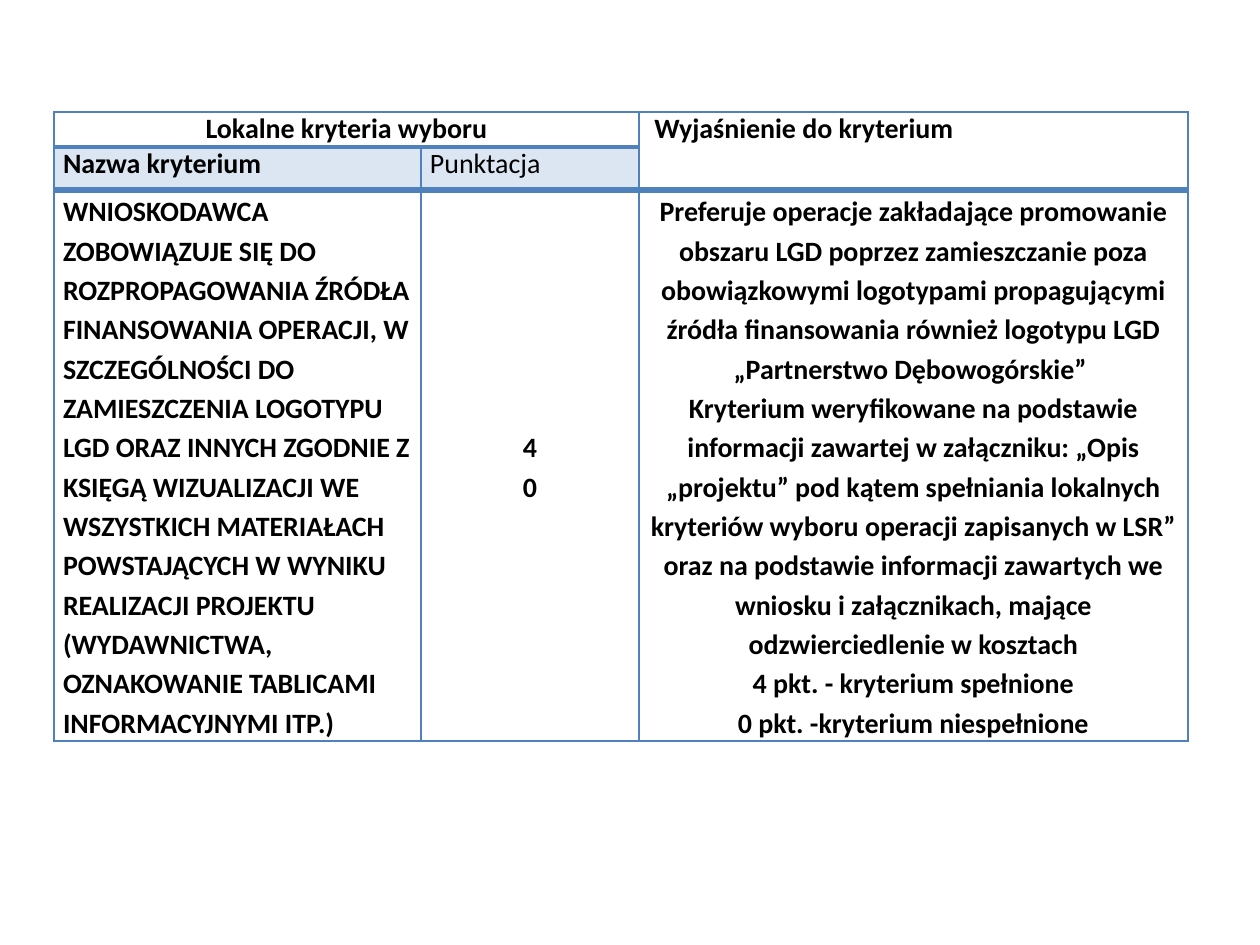
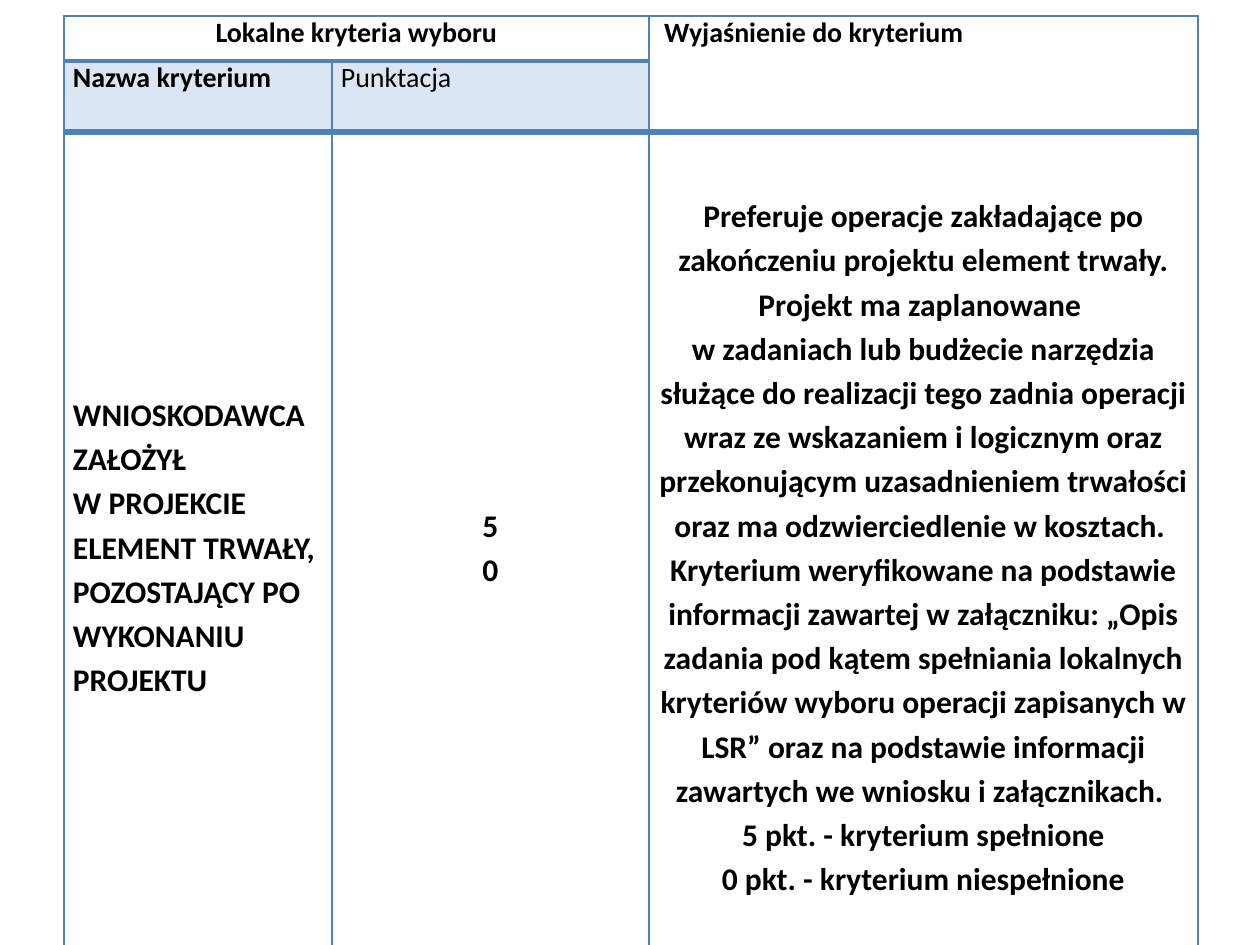
from copy import deepcopy
from lxml import etree
from pptx import Presentation
from pptx.dml.color import RGBColor
from pptx.enum.text import MSO_ANCHOR, PP_ALIGN
from pptx.oxml.ns import qn
from pptx.util import Pt

PX = 914400 // 126
LEFT, MID = PP_ALIGN.LEFT, PP_ALIGN.CENTER
TOP, HALF = MSO_ANCHOR.TOP, MSO_ANCHOR.MIDDLE
FONT = "Calibri"
HUES = {"line": "4F81BD", "band": "DCE6F2", "text": "000000"}
HEAD = ["Lokalne kryteria wyboru", "Nazwa kryterium", "Punktacja",
        " Wyjaśnienie do kryterium"]
RULES = [1, 2, 3.5, 1]
TALL = [1, 3.5, 3.5, 1]

PROMO = {
    "box": (54, 112), "cols": [367, 218, 549], "rows": [35, 43, 551],
    "size": 16,
    "name": ["WNIOSKODAWCA ZOBOWIĄZUJE SIĘ DO ROZPROPAGOWANIA ŹRÓDŁA "
             "FINANSOWANIA OPERACJI, W SZCZEGÓLNOŚCI DO ZAMIESZCZENIA "
             "LOGOTYPU LGD ORAZ INNYCH ZGODNIE Z KSIĘGĄ WIZUALIZACJI WE "
             "WSZYSTKICH MATERIAŁACH POWSTAJĄCYCH W WYNIKU REALIZACJI "
             "PROJEKTU (WYDAWNICTWA, OZNAKOWANIE TABLICAMI "
             "INFORMACYJNYMI ITP.)"],
    "marks": ["4", "0"],
    "notes": ["Preferuje operacje zakładające promowanie obszaru LGD poprzez "
              "zamieszczanie poza obowiązkowymi logotypami propagującymi "
              "źródła finansowania również logotypu LGD „Partnerstwo "
              "Dębowogórskie” \nKryterium weryfikowane na podstawie "
              "informacji zawartej w załączniku: „Opis „projektu” pod kątem "
              "spełniania lokalnych kryteriów wyboru operacji zapisanych w "
              "LSR” oraz na podstawie informacji zawartych we wniosku i "
              "załącznikach, mające odzwierciedlenie w kosztach\n"
              "4 pkt. - kryterium spełnione",
              "0 pkt. -kryterium niespełnione"],
}
LASTING = {
    "box": (64, 16), "cols": [268, 317, 549], "rows": [45, 71, 827],
    "size": 18,
    "name": ["WNIOSKODAWCA ZAŁOŻYŁ \nW PROJEKCIE ELEMENT TRWAŁY, "
             "POZOSTAJĄCY PO WYKONANIU PROJEKTU"],
    "marks": ["5", "0"],
    "notes": ["Preferuje operacje zakładające po zakończeniu projektu element "
              "trwały. Projekt ma zaplanowane \nw zadaniach lub budżecie "
              "narzędzia służące do realizacji tego zadnia operacji wraz ze "
              "wskazaniem i logicznym oraz przekonującym uzasadnieniem "
              "trwałości oraz ma odzwierciedlenie w kosztach. \nKryterium "
              "weryfikowane na podstawie informacji zawartej w załączniku: "
              "„Opis zadania pod kątem spełniania lokalnych kryteriów wyboru "
              "operacji zapisanych w LSR” oraz na podstawie informacji "
              "zawartych we wniosku i załącznikach. \n"
              "5 pkt. - kryterium spełnione",
              "0 pkt. - kryterium niespełnione"],
}


def edge(cell, side, width):
    """Draw one border of a cell."""
    line = etree.SubElement(cell._tc.get_or_add_tcPr(), qn("a:ln" + side),
                            w=str(Pt(width)))
    fill = etree.SubElement(line, qn("a:solidFill"))
    etree.SubElement(fill, qn("a:srgbClr"), val=HUES["line"])


def frame(cell, row, col):
    """Give a cell its borders, margins and fill."""
    rules = TALL if col == 2 else RULES
    for side, width in zip("LRTB", (1, 1, rules[row], rules[row + 1])):
        edge(cell, side, width)
    cell.margin_left = cell.margin_right = 9 * PX
    cell.margin_top = cell.margin_bottom = 0
    if row == 1 and col < 2:
        cell.fill.solid()
        cell.fill.fore_color.rgb = RGBColor.from_string(HUES["band"])
    else:
        cell.fill.background()


def write(cell, lines, size=16, bold=True, align=LEFT, anchor=TOP, space=None):
    """Fill a cell with paragraphs in one style."""
    cell.vertical_anchor = anchor
    body = cell.text_frame
    for i, line in enumerate(lines):
        para = body.add_paragraph() if i else body.paragraphs[0]
        para.text = line
        para.alignment = align
        para.line_spacing = space
        for run in para.runs:
            font = run.font
            font.name, font.size, font.bold = FONT, Pt(size), bold
            font.color.rgb = RGBColor.from_string(HUES["text"])
        for gap in para._p.findall(qn("a:br")):
            gap.insert(0, deepcopy(para.runs[0]._r.rPr))


def grid(slide, data):
    """Place an empty framed table with its merged heads."""
    left, top = data["box"]
    cols, rows = data["cols"], data["rows"]
    table = slide.shapes.add_table(
        len(rows), len(cols), left * PX, top * PX,
        sum(cols) * PX, sum(rows) * PX).table
    table.first_row = table.horz_banding = False
    for part, width in zip(table.columns, cols):
        part.width = width * PX
    for part, height in zip(table.rows, rows):
        part.height = height * PX
    for row in range(len(rows)):
        for col in range(len(cols)):
            frame(table.cell(row, col), row, col)
    table.cell(0, 0).merge(table.cell(0, 1))
    table.cell(0, 2).merge(table.cell(1, 2))
    return table


def sheet(deck, data):
    """Add a slide with one criterion table."""
    table = grid(deck.slides.add_slide(deck.slide_layouts[6]), data)
    group, name, marks, notes = HEAD
    write(table.cell(0, 0), [group], align=MID)
    write(table.cell(0, 2), [notes])
    write(table.cell(1, 0), [name])
    write(table.cell(1, 1), [marks], bold=False)
    for col, (key, align) in enumerate(
            [("name", LEFT), ("marks", MID), ("notes", MID)]):
        write(table.cell(2, col), data[key], data["size"], True, align,
              HALF, 1.15)


def main():
    """Build and save the deck."""
    deck = Presentation()
    deck.slide_width, deck.slide_height = 1260 * PX, 945 * PX
    for data in (PROMO, LASTING):
        sheet(deck, data)
    deck.save("out.pptx")


if __name__ == "__main__":
    main()
